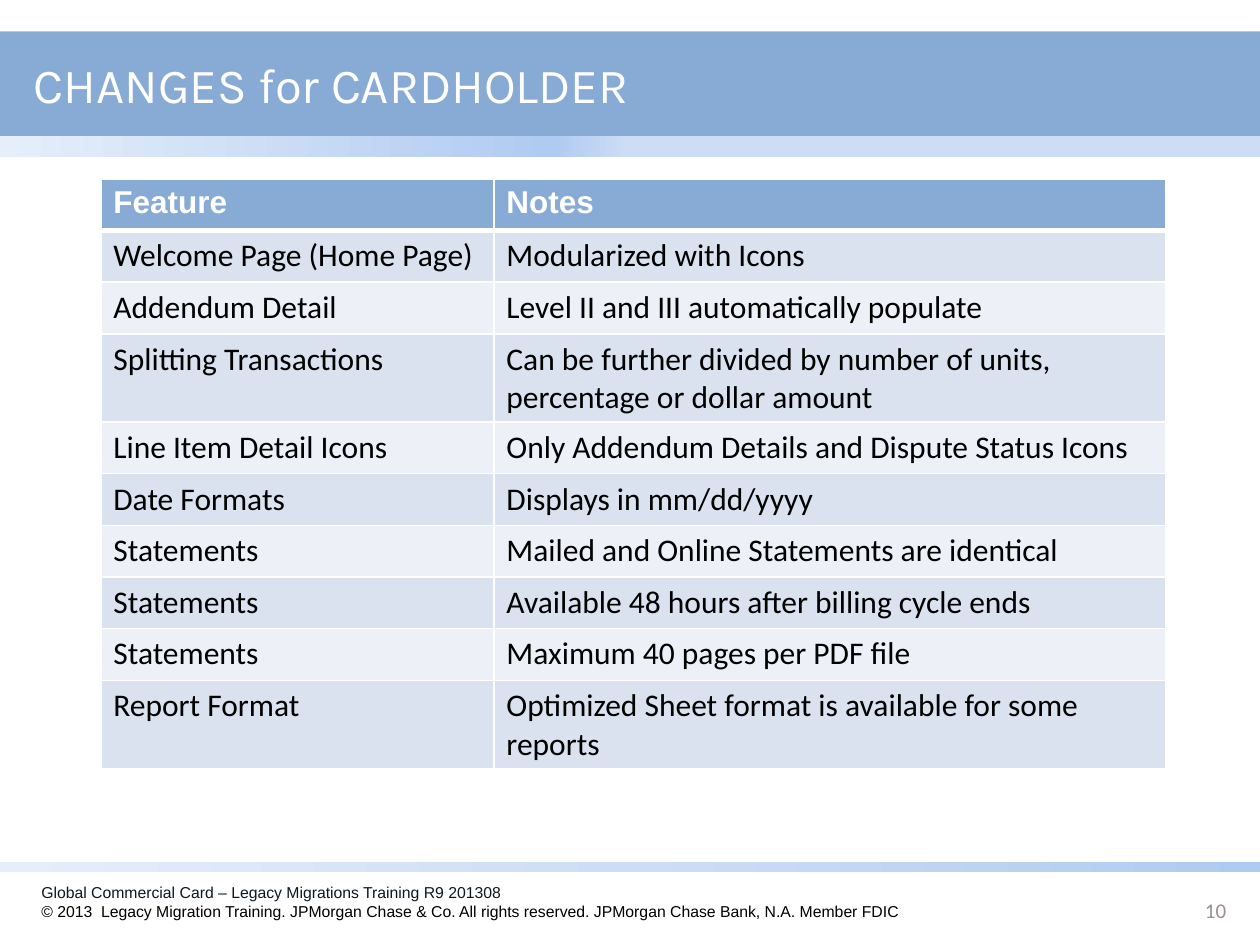
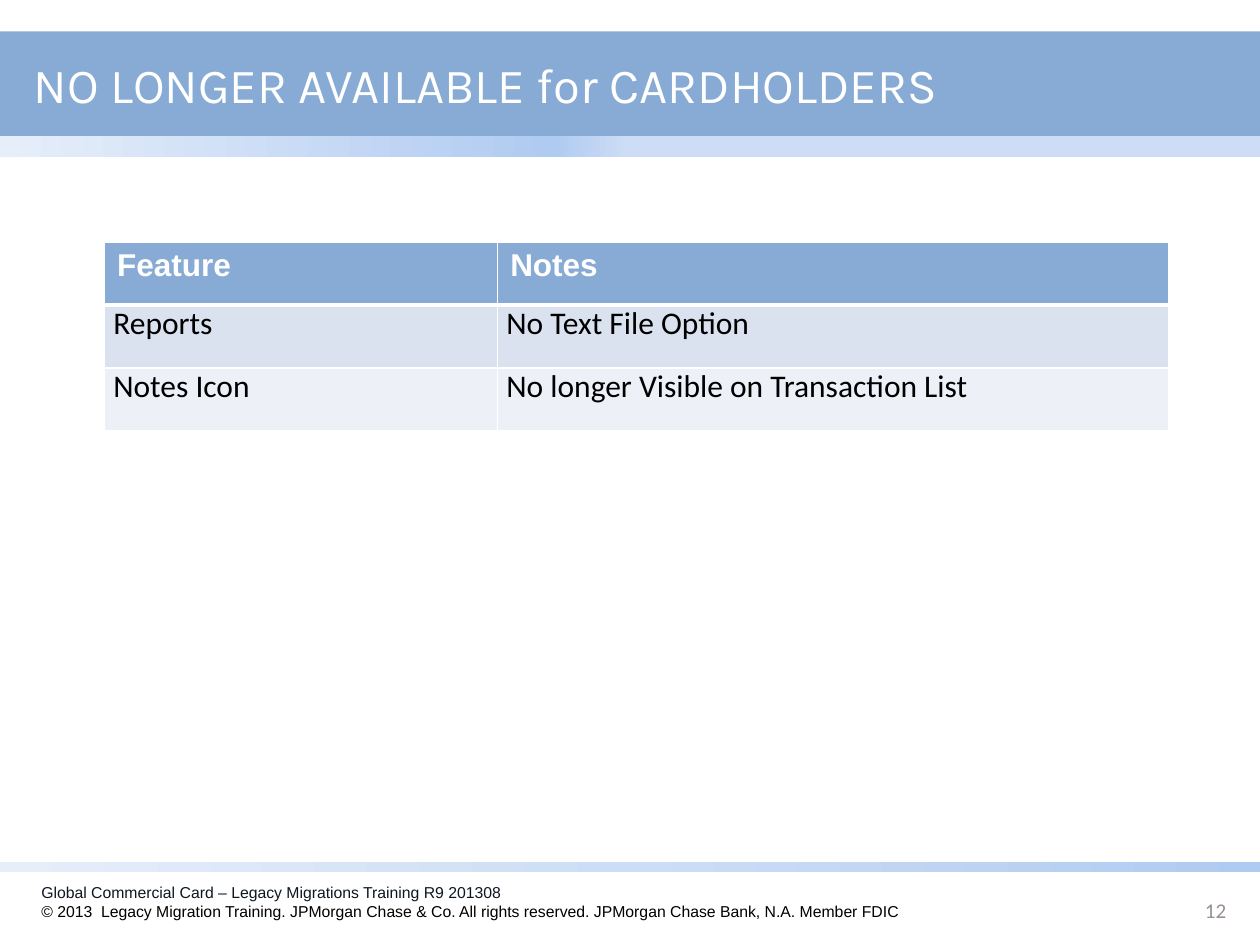
from lxml import etree
from pptx import Presentation
from pptx.dml.color import RGBColor
from pptx.enum.shapes import MSO_SHAPE
from pptx.enum.text import MSO_ANCHOR, PP_ALIGN
from pptx.oxml.ns import qn
from pptx.util import Inches, Pt

RECT = MSO_SHAPE.RECTANGLE
TOP, MIDDLE = MSO_ANCHOR.TOP, MSO_ANCHOR.MIDDLE
LEFT, RIGHT = PP_ALIGN.LEFT, PP_ALIGN.RIGHT

BLUE, WHITE, BLACK = "88ABD5", "FFFFFF", "000000"
NAVY, GREY = "0D1722", "998F8D"
PALE, SKY, MIST = "E6EEFA", "B0CBF1", "CDDDF5"
BANDS = ["DAE2EF", "EDF1F7"]
COLS = [3.12, 5.33]
HEAD = ("Feature", "Notes")

FOOTER = [
    ("Global Commercial Card – Legacy Migrations Training R9 201308", NAVY),
    ("© 2013  Legacy Migration Training. JPMorgan Chase & Co. All rights reserved. "
     "JPMorgan Chase Bank, N.A. Member FDIC", BLACK),
]

SLIDES = [
    {
        "title": "CHANGES for CARDHOLDER",
        "page": "10",
        "at": (0.8, 1.42),
        "height": 0.41,
        "inset": (0.1, 0.05),
        "after": 0,
        "rows": [
            ("Welcome Page (Home Page)", "Modularized with Icons"),
            ("Addendum Detail", "Level II and III automatically populate"),
            ("Splitting Transactions",
             "Can be further divided by number of units, percentage or dollar amount"),
            ("Line Item Detail Icons", "Only Addendum Details and Dispute Status Icons"),
            ("Date Formats", "Displays in mm/dd/yyyy"),
            ("Statements", "Mailed and Online Statements are identical"),
            ("Statements", "Available 48 hours after billing cycle ends"),
            ("Statements", "Maximum 40 pages per PDF file"),
            ("Report Format", "Optimized Sheet format is available for some reports"),
        ],
    },
    {
        "title": "NO LONGER AVAILABLE for CARDHOLDERS",
        "page": "12",
        "at": (0.83, 1.92),
        "height": 0.5,
        "inset": (0.07, 0),
        "after": 12,
        "rows": [
            ("Reports", "No Text File Option"),
            ("Notes Icon", "No longer Visible on Transaction List"),
        ],
    },
]


def rgb(code):
    return RGBColor.from_string(code)


def write(par, text, font, size, color, bold=False):
    run = par.add_run()
    run.text = text
    run.font.name = font
    run.font.size = Pt(size)
    run.font.bold = bold
    run.font.color.rgb = rgb(color)


def add_bar(slide, top, height, stops):
    bar = slide.shapes.add_shape(RECT, 0, Inches(top), Inches(10), Inches(height))
    bar.shadow.inherit = False
    bar.line.fill.background()
    if len(stops) == 1:
        bar.fill.solid()
        bar.fill.fore_color.rgb = rgb(stops[0][1])
        return
    bar.fill.gradient()
    bar.fill.gradient_angle = 0
    group = bar.element.spPr.find(".//" + qn("a:gsLst"))
    for old in list(group):
        group.remove(old)
    for place, color in stops:
        stop = etree.SubElement(group, qn("a:gs"), pos=str(place * 1000))
        etree.SubElement(stop, qn("a:srgbClr"), val=color)


def add_text(slide, box, lines, font, size, anchor=MIDDLE, align=LEFT):
    frame = slide.shapes.add_textbox(*map(Inches, box)).text_frame
    frame.word_wrap = True
    frame.vertical_anchor = anchor
    for i, (text, color) in enumerate(lines):
        par = frame.add_paragraph() if i else frame.paragraphs[0]
        par.alignment = align
        write(par, text, font, size, color)


def add_edges(cell, row):
    props = cell._tc.get_or_add_tcPr()
    widths = {"L": 1, "R": 1, "T": 3 if row == 1 else 1, "B": 1 if row else 3}
    for side, width in widths.items():
        line = etree.SubElement(props, qn("a:ln" + side), w=str(Pt(width)))
        fill = etree.SubElement(line, qn("a:solidFill"))
        etree.SubElement(fill, qn("a:srgbClr"), val=WHITE)


def add_grid(slide, data):
    rows = [HEAD] + data["rows"]
    left, top = data["at"]
    height = data["height"]
    table = slide.shapes.add_table(
        len(rows), len(COLS), Inches(left), Inches(top),
        Inches(sum(COLS)), Inches(height * len(rows))).table
    table.first_row = table.horz_banding = False
    for col, width in zip(table.columns, COLS):
        col.width = Inches(width)
    for r, texts in enumerate(rows):
        table.rows[r].height = Inches(height)
        for c, text in enumerate(texts):
            cell = table.cell(r, c)
            add_edges(cell, r)
            cell.fill.solid()
            cell.fill.fore_color.rgb = rgb(BANDS[(r - 1) % 2] if r else BLUE)
            par = cell.text_frame.paragraphs[0]
            if r:
                side, edge = data["inset"]
                cell.margin_left = cell.margin_right = Inches(side)
                cell.margin_top = cell.margin_bottom = Inches(edge)
                par.space_after = Pt(data["after"])
                write(par, text, "Calibri", 18, BLACK)
            else:
                write(par, text, "Arial", 18, WHITE, True)


def add_frame(slide, title, page):
    add_bar(slide, 0.25, 0.83, [(0, BLUE)])
    add_bar(slide, 1.08, 0.17, [(0, PALE), (44, SKY), (50, MIST), (100, MIST)])
    add_bar(slide, 6.84, 0.08, [(0, PALE), (50, MIST), (100, SKY)])
    add_text(slide, (0.23, 6.96, 7.14, 0.4), FOOTER, "Arial", 9, TOP)
    add_text(slide, (0.17, 0.25, 9, 0.83), [(title, WHITE)], "Karla", 28)
    add_text(slide, (7.5, 7.02, 2.33, 0.4), [(page, GREY)], "Calibri", 12, align=RIGHT)


def main():
    deck = Presentation()
    deck.slide_width, deck.slide_height = Inches(10), Inches(7.5)
    for data in SLIDES:
        slide = deck.slides.add_slide(deck.slide_layouts[6])
        add_frame(slide, data["title"], data["page"])
        add_grid(slide, data)
    deck.save("out.pptx")


if __name__ == "__main__":
    main()
